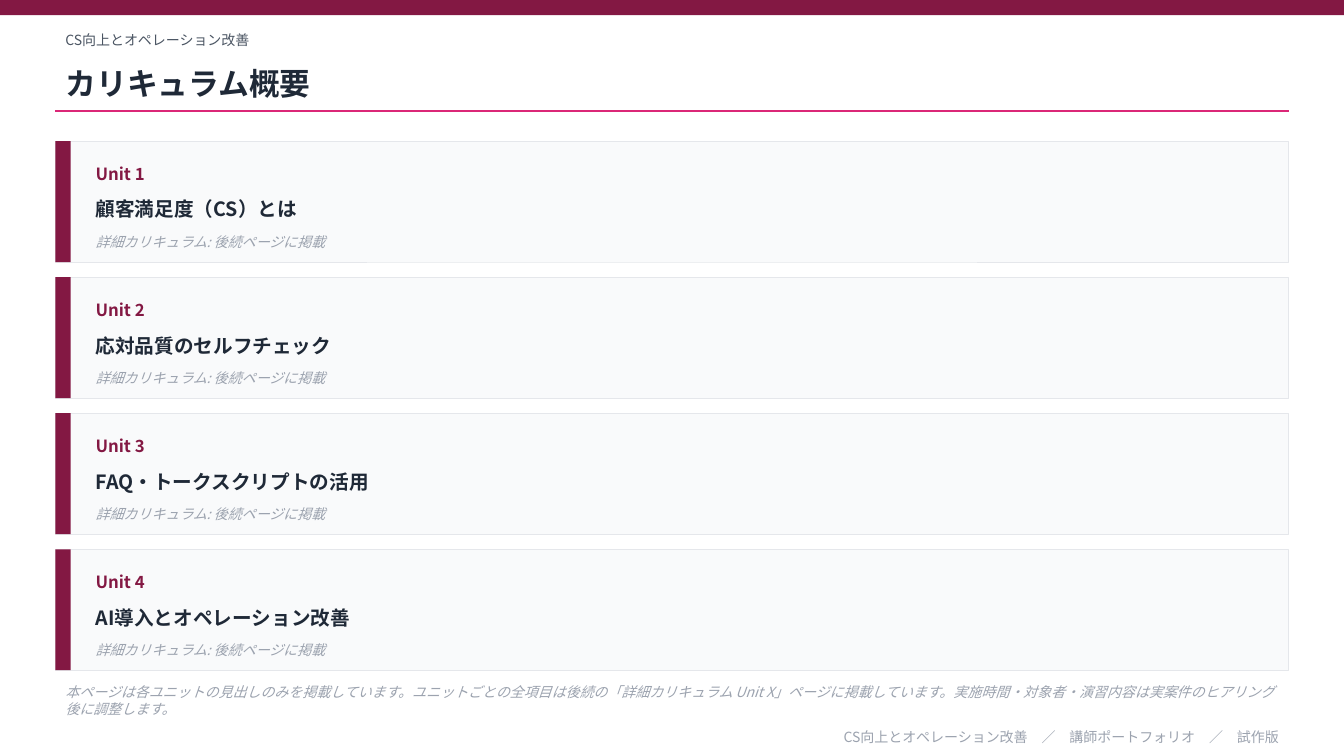
from pptx import Presentation, util as u
from pptx.dml.color import RGBColor
from pptx.enum import shapes, text
from pptx.oxml.ns import qn
from lxml import etree

FONT = "Noto Sans CJK JP"
WINE, PINK, INK, SLATE, GREY = "831843", "DB2777", "1F2937", "4B5563", "9CA3AF"
PALE, EDGE = "F9FAFB", "E5E7EB"
WIDE, HIGH = 1333, 750
LEFT, SPAN = 55, 1223
COURSE = "CS向上とオペレーション改善"
UNITS = ["顧客満足度（CS）とは", "応対品質のセルフチェック",
         "FAQ・トークスクリプトの活用", "AI導入とオペレーション改善"]
DETAIL = "詳細カリキュラム: 後続ページに掲載"
NOTICE = ("本ページは各ユニットの見出しのみを掲載しています。ユニットごとの全項目は"
          "後続の「詳細カリキュラム Unit X」ページに掲載しています。"
          "実施時間・対象者・演習内容は実案件のヒアリング後に調整します。")


def px(n):
    """Turn px, a hundred to the inch, into EMU."""
    return u.Emu(n * 9144)


def hue(code):
    """Turn a hex string into a colour."""
    return RGBColor.from_string(code)


def style(frame, words, size, color, bold=False, slant=False,
          align=text.PP_ALIGN.LEFT):
    """Write one formatted paragraph into a text frame."""
    frame.word_wrap = True
    frame.auto_size = text.MSO_AUTO_SIZE.NONE
    frame.vertical_anchor = text.MSO_ANCHOR.MIDDLE
    para = frame.paragraphs[0]
    para.text = words
    para.alignment = align
    font = para.font
    font.name, font.size = FONT, u.Pt(size)
    font.bold, font.italic = bold, slant
    font.color.rgb = hue(color)
    props = para._p.get_or_add_pPr().find(qn("a:defRPr"))
    etree.SubElement(props, qn("a:ea"), typeface=FONT)


def label(slide, box, words, size, color, **look):
    """Add a text box."""
    area = slide.shapes.add_textbox(*map(px, box))
    style(area.text_frame, words, size, color, **look)


def block(slide, box, fill, edge=None):
    """Add a flat rectangle, with a thin edge if one is given."""
    rect = slide.shapes.add_shape(shapes.MSO_SHAPE.RECTANGLE, *map(px, box))
    rect.shadow.inherit = False
    rect.fill.solid()
    rect.fill.fore_color.rgb = hue(fill)
    if edge:
        rect.line.color.rgb = hue(edge)
        rect.line.width = u.Pt(0.5)
    else:
        rect.line.fill.background()


def header(slide, x, y, w):
    """Place the course name, the title and the rule below them."""
    block(slide, (0, 0, WIDE, 15), WINE)
    label(slide, (x, y, w, 30), COURSE, 10, SLATE)
    title = slide.shapes.title
    title.left, title.top, title.width, title.height = map(px, (x, y + 30, w, 55))
    style(title.text_frame, "カリキュラム概要", 22, INK, bold=True)
    rule = slide.shapes.add_connector(
        shapes.MSO_CONNECTOR.STRAIGHT, *map(px, (x, y + 85, x + w, y + 85)))
    rule.line.color.rgb = hue(PINK)
    rule.line.width = u.Pt(1)
    etree.SubElement(rule._element.spPr, qn("a:effectLst"))


def card(slide, x, y, w, h, num, name):
    """Place one unit card with its accent bar and three texts."""
    block(slide, (x, y, w, h), PALE, EDGE)
    block(slide, (x, y, 15, h), WINE)
    label(slide, (x + 30, y + 12, 150, 40), f"Unit {num}", 12, WINE, bold=True)
    label(slide, (x + 30, y + 45, w - 50, 45), name, 14, INK, bold=True)
    label(slide, (x + 30, y + 85, w - 50, 30), DETAIL, 10, GREY, slant=True)


def footer(slide, x, y, w):
    """Place the notice and the closing line."""
    label(slide, (x, y, w, 40), NOTICE, 10, GREY, slant=True)
    label(slide, (x, y + 45, w, 22), f"{COURSE}　／　講師ポートフォリオ　／　試作版",
          10, GREY, align=text.PP_ALIGN.RIGHT)


def main():
    """Build the slide and save it."""
    deck = Presentation()
    deck.slide_width, deck.slide_height = px(WIDE), px(HIGH)
    slide = deck.slides.add_slide(deck.slide_layouts[5])
    header(slide, LEFT, 25, SPAN)
    for i, name in enumerate(UNITS):
        card(slide, LEFT, 140 + i * 135, SPAN, 120, i + 1, name)
    footer(slide, LEFT, 675, SPAN)
    deck.save("out.pptx")


if __name__ == "__main__":
    main()
